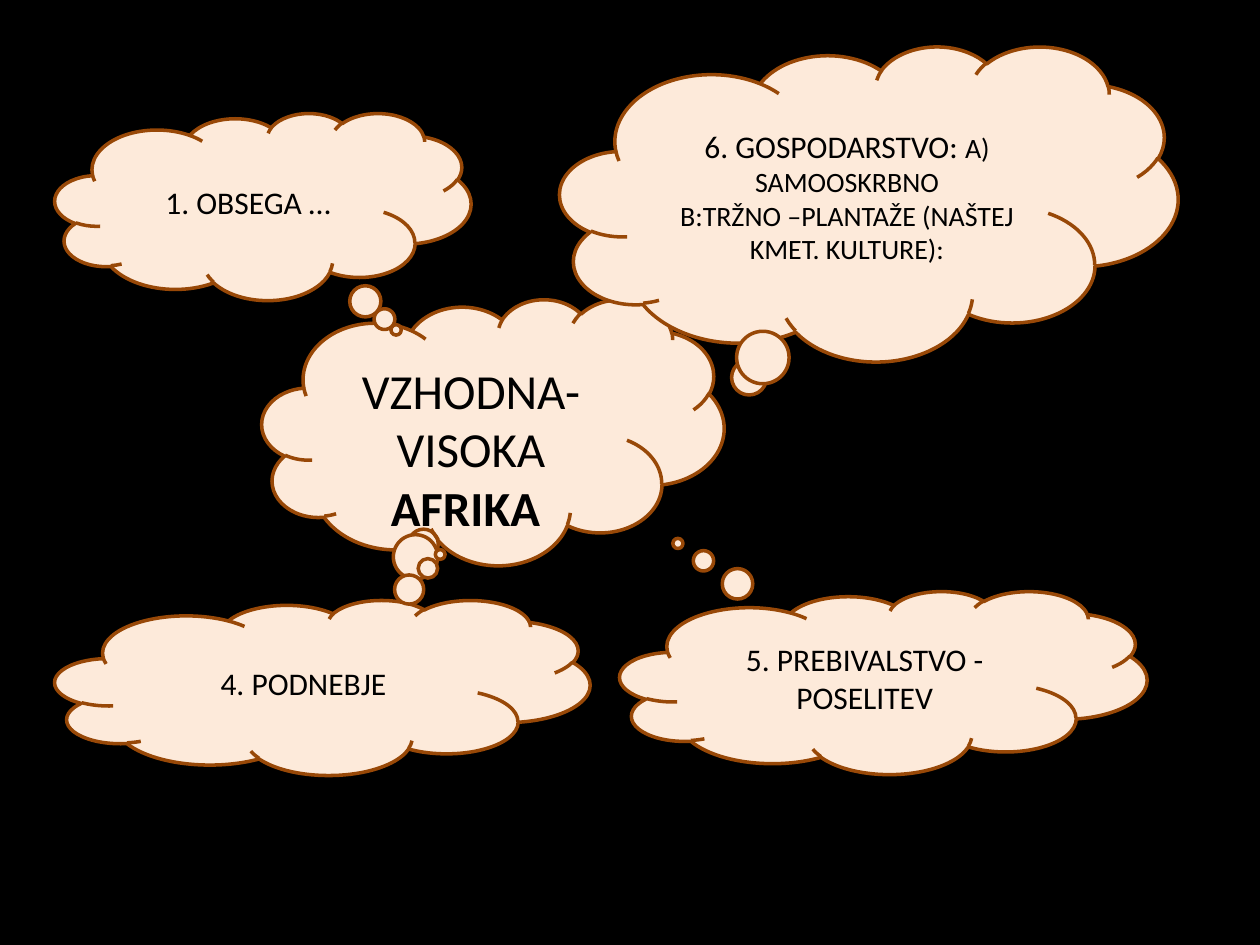
from pptx import Presentation
from pptx.dml.color import RGBColor
from pptx.enum.shapes import MSO_SHAPE
from pptx.enum.text import MSO_ANCHOR, MSO_AUTO_SIZE, PP_ALIGN
from pptx.util import Emu, Pt

THEME = {
    "font": "Calibri",
    "background": RGBColor(0x00, 0x00, 0x00),
    "cloud": RGBColor(0xFD, 0xEA, 0xDA),
    "outline": RGBColor(0x98, 0x48, 0x07),
    "text": RGBColor(0x00, 0x00, 0x00),
    "outline_width": Pt(2),
    "title": Pt(28),
    "topic": Pt(18),
    "detail": Pt(16),
}


def px(*lengths):
    """Turn pixels (126 to the inch) into a list of EMU lengths."""
    return [Emu(round(length * 914400 / 126)) for length in lengths]


def write(frame, lines, size):
    """Fill a frame with centred lines, each a list of (text, run options)."""
    frame.word_wrap = True
    for index, runs in enumerate(lines):
        paragraph = frame.add_paragraph() if index else frame.paragraphs[0]
        paragraph.alignment = PP_ALIGN.CENTER
        paragraph.font.name = THEME["font"]
        paragraph.font.size = size
        paragraph.font.color.rgb = THEME["text"]
        for text, options in runs:
            run = paragraph.add_run()
            run.text = text
            for option, value in options.items():
                setattr(run.font, option, value)


presentation = Presentation()
presentation.slide_width, presentation.slide_height = px(1260, 945)
slide = presentation.slides.add_slide(presentation.slide_layouts[6])
slide.background.fill.solid()
slide.background.fill.fore_color.rgb = THEME["background"]

detail = {"size": THEME["detail"]}
economy = [
    [("6. GOSPODARSTVO: ", {}), ("A) SAMOOSKRBNO", detail)],
    [("B:TRŽNO –PLANTAŽE (NAŠTEJ KMET. KULTURE):", detail)],
]

# Box in px, tail offset as a share of the box, lines of text
clouds = [
    ((262, 299, 462, 266), (-0.15, 0.42), []),
    ((55, 113, 416, 187), (0.32, 0.66), [[("1. OBSEGA …", {})]]),
    ((55, 600, 535, 175), (0.22, -0.76), [[("4. PODNEBJE", {})]]),
    ((560, 46, 618, 315), (-0.2, 0.57), economy),
    ((620, 591, 527, 183), (-0.39, -0.76), [[("5. PREBIVALSTVO - POSELITEV", {})]]),
]
for box, tail, lines in clouds:
    cloud = slide.shapes.add_shape(MSO_SHAPE.CLOUD_CALLOUT, *px(*box))
    cloud.shadow.inherit = False
    cloud.adjustments[0], cloud.adjustments[1] = tail
    cloud.fill.solid()
    cloud.fill.fore_color.rgb = THEME["cloud"]
    cloud.line.color.rgb = THEME["outline"]
    cloud.line.width = THEME["outline_width"]
    cloud.text_frame.vertical_anchor = MSO_ANCHOR.MIDDLE
    write(cloud.text_frame, lines, THEME["topic"])

region = slide.shapes.add_textbox(*px(343, 354, 256, 190)).text_frame
region.auto_size = MSO_AUTO_SIZE.SHAPE_TO_FIT_TEXT
write(region, [[("VZHODNA- VISOKA ", {}), ("AFRIKA ", {"bold": True})]], THEME["title"])

presentation.save("out.pptx")
